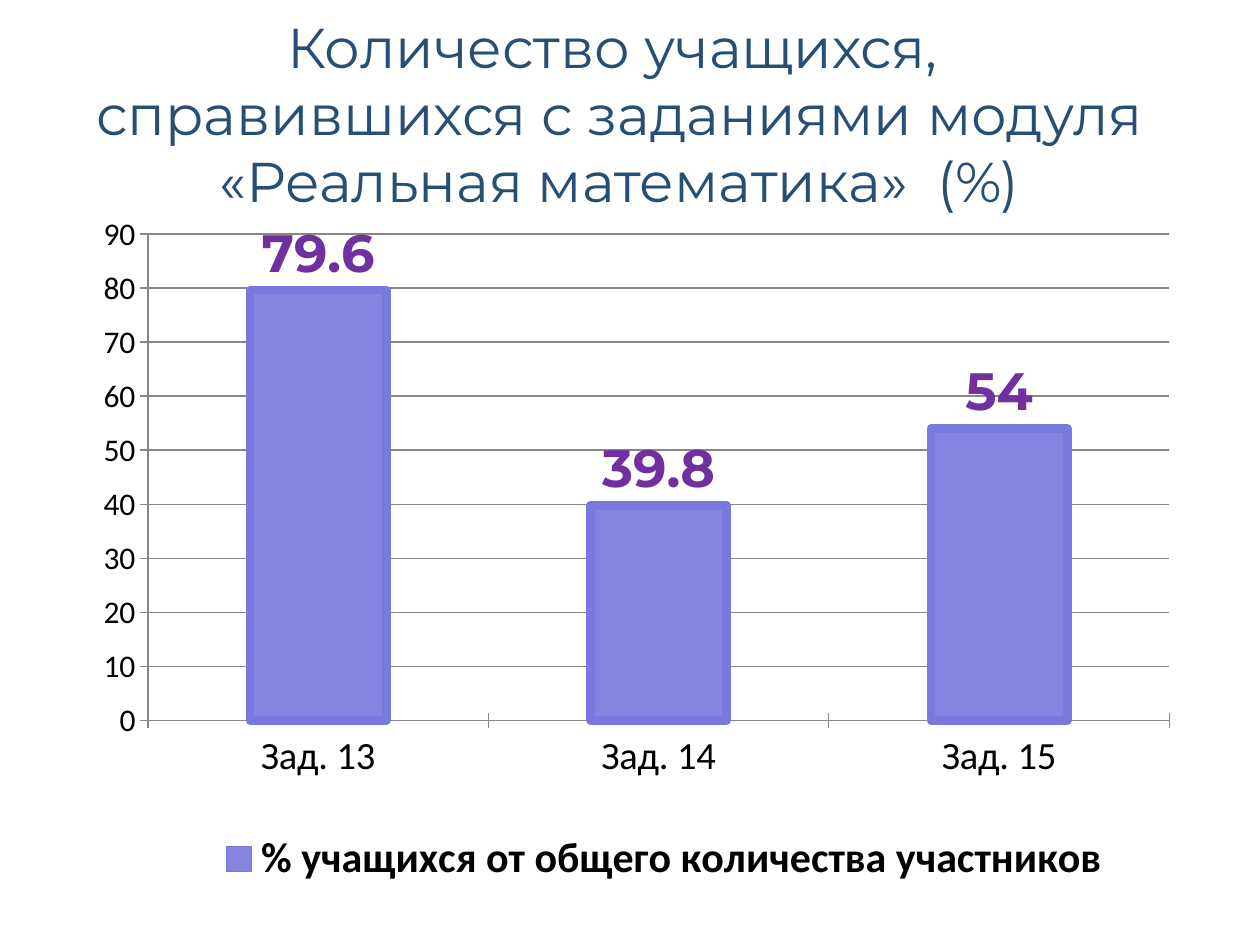
from lxml.etree import SubElement
from pptx import Presentation
from pptx.chart.data import CategoryChartData
from pptx.dml.color import RGBColor
from pptx.enum.chart import XL_CHART_TYPE, XL_LABEL_POSITION, XL_LEGEND_POSITION, XL_TICK_MARK
from pptx.enum.text import MSO_ANCHOR, PP_ALIGN
from pptx.oxml.ns import qn
from pptx.util import Inches, Pt

TITLE_LINES = ["Количество учащихся, ",
               "справившихся с заданиями модуля «Реальная математика»  (%)"]
SERIES_NAME = "% учащихся от общего количества участников"
RESULTS = {"Зад. 13": 79.6, "Зад. 14": 39.8, "Зад. 15": 54}

TITLE_BOX = (0, 0.16, 9.84, 1.48)
CHART_BOX = (0.55, 1.56, 8.91, 5.94)
# Shares of the chart's width and height
PLOT_SHARE = (0.07, 0.05, 0.91, 0.65)
LEGEND_SHARE = (0.13, 0.84, 0.8, 0.09)


def color(hex_value):
    return RGBColor.from_string(hex_value)


def style_font(font, size, hex_value="000000", name="Calibri", bold=False):
    font.size, font.name, font.bold = Pt(size), name, bold
    font.color.rgb = color(hex_value)


def place(parent, index, shares, inner=False):
    """Give a chart part a fixed position inside the chart."""
    for old in parent.findall(qn("c:layout")):
        parent.remove(old)
    layout = SubElement(parent, qn("c:layout"))
    parent.insert(index, layout)
    manual = SubElement(layout, qn("c:manualLayout"))
    settings = [("layoutTarget", "inner")] if inner else []
    settings += [("xMode", "edge"), ("yMode", "edge"), *zip("xywh", shares)]
    for tag, value in settings:
        SubElement(manual, qn(f"c:{tag}")).set("val", str(value))


def add_title(slide):
    frame = slide.shapes.add_textbox(*map(Inches, TITLE_BOX)).text_frame
    frame.word_wrap = True
    frame.vertical_anchor = MSO_ANCHOR.MIDDLE
    paragraph = frame.paragraphs[0]
    paragraph.alignment = PP_ALIGN.CENTER
    for number, line in enumerate(TITLE_LINES):
        if number:
            paragraph.add_line_break()
        run = paragraph.add_run()
        run.text = line
        style_font(run.font, 32, "274E75", "Montserrat")


def add_results_chart(slide):
    data = CategoryChartData()
    data.categories = list(RESULTS)
    data.add_series(SERIES_NAME, list(RESULTS.values()))
    chart = slide.shapes.add_chart(
        XL_CHART_TYPE.COLUMN_CLUSTERED, *map(Inches, CHART_BOX), data).chart
    chart.has_title = False
    style_font(chart.font, 18)

    plot = chart.plots[0]
    plot.gap_width = 150
    plot.vary_by_categories = False
    bars = plot.series[0].format
    bars.fill.solid()
    bars.fill.fore_color.rgb = color("8585E0")
    bars.line.color.rgb = color("7878DE")
    bars.line.width = Pt(5)

    plot.has_data_labels = True
    labels = plot.data_labels
    labels.show_value = True
    labels.position = XL_LABEL_POSITION.OUTSIDE_END
    style_font(labels.font, 30, "7030A0", "Montserrat", True)

    values, tasks = chart.value_axis, chart.category_axis
    values.minimum_scale, values.maximum_scale, values.major_unit = 0, 90, 10
    values.has_major_gridlines = True
    for axis, size in ((values, 18), (tasks, 22)):
        axis.major_tick_mark = XL_TICK_MARK.CROSS
        style_font(axis.tick_labels.font, size)
    for rule in (values, tasks, values.major_gridlines):
        rule.format.line.color.rgb = color("878787")
        rule.format.line.width = Pt(0.75)

    chart.has_legend = True
    legend = chart.legend
    legend.position = XL_LEGEND_POSITION.BOTTOM
    legend.include_in_layout = False
    style_font(legend.font, 24, bold=True)

    chart_xml = chart.element.find(qn("c:chart"))
    place(chart_xml.find(qn("c:plotArea")), 0, PLOT_SHARE, inner=True)
    place(chart_xml.find(qn("c:legend")), 1, LEGEND_SHARE)


def main():
    deck = Presentation()
    deck.slide_width, deck.slide_height = Inches(10), Inches(7.5)
    slide = deck.slides.add_slide(deck.slide_layouts[6])
    add_title(slide)
    add_results_chart(slide)
    deck.save("out.pptx")


if __name__ == "__main__":
    main()
